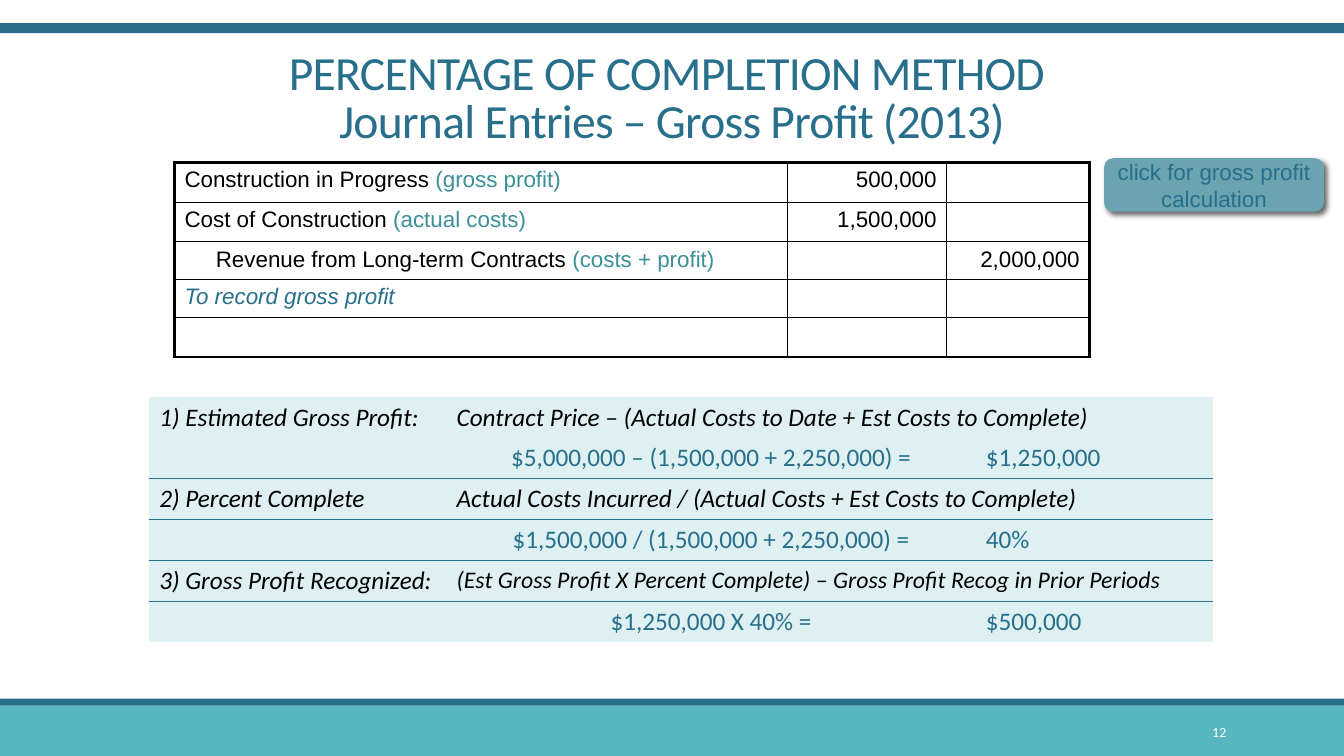
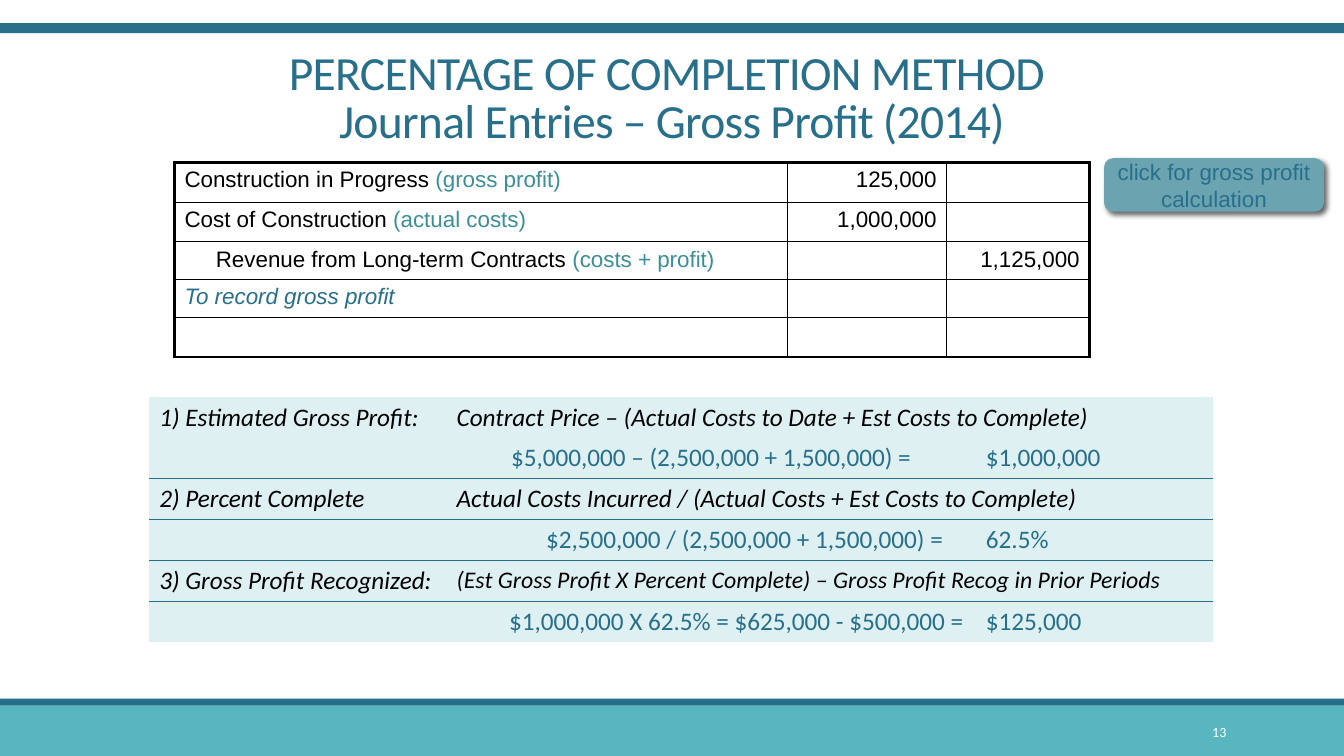
from dataclasses import dataclass

from lxml import etree
from pptx import Presentation
from pptx.dml.color import RGBColor
from pptx.enum.shapes import MSO_SHAPE as Preset
from pptx.enum.text import MSO_ANCHOR as Anchor, MSO_AUTO_SIZE as AutoSize, PP_ALIGN as Align
from pptx.oxml.ns import qn
from pptx.util import Inches, Pt


@dataclass(frozen=True)
class Theme:
    navy: str = "276F8B"
    teal: str = "58B6C0"
    note: str = "3A8F98"
    button: str = "6CA3B1"
    pale: str = "DEF0F2"
    black: str = "000000"
    white: str = "FFFFFF"
    heading_font: str = "Calibri"
    entry_font: str = "Arial"
    title_size: float = 34
    calc_size: float = 18
    long_size: float = 17
    entry_size: float = 16
    number_size: float = 10
    thin: float = 1
    thick: float = 2.25


@dataclass(frozen=True)
class YearEntry:
    number: int
    year: int
    profit: str
    costs: str
    revenue: str
    workings: tuple


THEME = Theme()
WIDTH, HEIGHT = Inches(13.33), Inches(7.5)
NO_TABLE_STYLE = "{2D5ABB26-0587-4C30-8999-92F81FD0307C}"

ENTRIES = (
    YearEntry(12, 2013, "500,000", "1,500,000", "2,000,000", (
        ("$5,000,000 – (1,500,000 + 2,250,000) =", "$1,250,000", 0),
        ("$1,500,000 / (1,500,000 + 2,250,000) =", "40%", 0),
        ("$1,250,000 X 40% =", "$500,000", 0))),
    YearEntry(13, 2014, "125,000", "1,000,000", "1,125,000", (
        ("$5,000,000 – (2,500,000 + 1,500,000) =", "$1,000,000", 0),
        ("$2,500,000 / (2,500,000 + 1,500,000) =", "62.5%", 5),
        ("$1,000,000 X 62.5% = $625,000 - $500,000 =", "$125,000", 3.75))),
)
STEPS = (
    ("1) Estimated Gross Profit:",
     "Contract Price – (Actual Costs to Date + Est Costs to Complete)", THEME.calc_size),
    ("2) Percent Complete",
     "Actual Costs Incurred / (Actual Costs + Est Costs to Complete)", THEME.calc_size),
    ("3) Gross Profit Recognized:",
     "(Est Gross Profit X Percent Complete) – Gross Profit Recog in Prior Periods",
     THEME.long_size),
)


def col(share):
    return round(WIDTH * share / 100)


def row(share):
    return round(HEIGHT * share / 100)


def place(left, top, width, height):
    return col(left), row(top), col(width), row(height)


def add_run(paragraph, text, font, size, colour, italic=False):
    run = paragraph.add_run()
    run.text = text
    run.font.name = font
    run.font.size = Pt(size)
    run.font.italic = italic
    run.font.color.rgb = RGBColor.from_string(colour)
    return run


def add_panel(slide, preset, box, colour):
    panel = slide.shapes.add_shape(preset, *place(*box))
    panel.shadow.inherit = False
    panel.fill.solid()
    panel.fill.fore_color.rgb = RGBColor.from_string(colour)
    panel.line.fill.background()
    return panel


def furnish_layout(layout, slide):
    heading = layout.placeholders[0]
    heading.left, heading.top, heading.width, heading.height = place(0, 6.13, 100, 16.67)
    bands = ((0, 93.33, 100, 6.67, THEME.teal),
             (0, 92.4, 100, 0.93, THEME.navy),
             (0, 3.07, 100, 1.33, THEME.navy))
    for order, (*box, colour) in enumerate(bands):
        band = add_panel(slide, Preset.RECTANGLE, box, colour)._element
        band.nvSpPr.cNvPr.set("id", str(100 + order))
        layout.shapes._spTree.insert(2 + order, band)


def add_title(slide, year):
    frame = slide.shapes.title.text_frame
    frame.auto_size = AutoSize.NONE
    frame.vertical_anchor = Anchor.TOP
    heading = frame.paragraphs[0]
    heading.alignment = Align.CENTER
    heading.line_spacing = 0.85
    lines = ("PERCENTAGE OF COMPLETION METHOD ",
             f"Journal Entries – Gross Profit ({year})")
    for order, line in enumerate(lines):
        if order:
            heading.add_line_break()
        run = add_run(heading, line, THEME.heading_font, THEME.title_size, THEME.navy)
        run.font._element.set("spc", "-50")


def add_slide_number(slide, number):
    frame = slide.shapes.add_textbox(*place(81.25, 94.13, 10.73, 5.33)).text_frame
    frame.word_wrap = True
    frame.vertical_anchor = Anchor.MIDDLE
    paragraph = frame.paragraphs[0]
    paragraph.alignment = Align.RIGHT
    add_run(paragraph, str(number), THEME.heading_font, THEME.number_size, THEME.white)


def add_button(slide):
    button = add_panel(slide, Preset.ROUNDED_RECTANGLE, (82.15, 20.93, 16.35, 7.07), THEME.button)
    effects = button._element.spPr.find(qn("a:effectLst"))
    shadow = etree.SubElement(effects, qn("a:outerShdw"), blurRad=str(Pt(4)),
                              dist=str(Pt(3)), dir=str(45 * 60000), rotWithShape="0")
    shade = etree.SubElement(shadow, qn("a:srgbClr"), val=THEME.black)
    etree.SubElement(shade, qn("a:alpha"), val="60000")
    frame = button.text_frame
    frame.word_wrap = True
    frame.margin_left = frame.margin_right = col(0.4)
    frame.margin_top = frame.margin_bottom = 0
    frame.vertical_anchor = Anchor.MIDDLE
    label = frame.paragraphs[0]
    label.alignment = Align.CENTER
    add_run(label, "click for gross profit calculation",
            THEME.entry_font, THEME.entry_size, THEME.navy)


def add_plain_table(slide, left, top, widths, heights):
    box = place(left, top, sum(widths), sum(heights))
    table = slide.shapes.add_table(len(heights), len(widths), *box).table
    table.first_row = table.horz_banding = False
    table._tbl.tblPr.find(qn("a:tableStyleId")).text = NO_TABLE_STYLE
    for column, width in zip(table.columns, widths):
        column.width = col(width)
    for line, height in zip(table.rows, heights):
        line.height = row(height)
    return table


def set_borders(cell, colour, **weights):
    properties = cell._tc.get_or_add_tcPr()
    for side in "LRTB":
        if side in weights:
            border = etree.SubElement(properties, qn(f"a:ln{side}"), w=str(Pt(weights[side])))
            paint = etree.SubElement(border, qn("a:solidFill"))
            etree.SubElement(paint, qn("a:srgbClr"), val=colour)


def write_cell(cell, runs, font, size, align=Align.LEFT, indent=0):
    paragraph = cell.text_frame.paragraphs[0]
    paragraph.alignment = align
    if indent:
        paragraph._p.get_or_add_pPr().set("marL", str(col(indent)))
    for text, colour, italic in runs:
        add_run(paragraph, text, font, size, colour, italic)
    if not runs:
        etree.SubElement(paragraph._p, qn("a:endParaRPr"), sz=str(size * 100))


def add_journal(slide, entry):
    black, note = THEME.black, THEME.note
    lines = (
        ((("Construction in Progress ", black, False), ("(gross profit)", note, False)),
         entry.profit, "", 0),
        ((("Cost of Construction ", black, False), ("(actual costs)", note, False)),
         entry.costs, "", 0),
        ((("Revenue from Long-term Contracts ", black, False), ("(costs + profit)", note, False)),
         "", entry.revenue, 2.33),
        ((("To record gross profit", THEME.navy, True),), "", "", 0),
        ((), "", "", 0),
    )
    table = add_plain_table(slide, 12.98, 21.47, (45.61, 11.85, 10.65),
                            (5.33, 5.2, 4.93, 5.07, 5.2))
    for r, (account, debit, credit, indent) in enumerate(lines):
        amounts = [((text, black, False),) if text else () for text in (debit, credit)]
        for c, runs in enumerate((account, *amounts)):
            cell = table.cell(r, c)
            set_borders(cell, black,
                        L=THEME.thin if c else THEME.thick,
                        R=THEME.thick if c == 2 else THEME.thin,
                        T=THEME.thin if r else THEME.thick,
                        B=THEME.thin)
            cell.fill.background()
            write_cell(cell, runs, THEME.entry_font, THEME.entry_size,
                       Align.RIGHT if c else Align.LEFT, 0 if c else indent)


def add_calculation(slide, workings):
    table = add_plain_table(slide, 11.1, 52.53, (22.13, 39.38, 17.63), (5.4,) * 6)
    last = len(table.rows) - 1
    for r in range(last + 1):
        for c in range(3):
            cell = table.cell(r, c)
            if r % 2 == 0 and r > 0:
                set_borders(cell, THEME.navy, T=THEME.thin)
            elif r % 2 and r < last:
                set_borders(cell, THEME.navy, B=THEME.thin)
            cell.fill.solid()
            cell.fill.fore_color.rgb = RGBColor.from_string(THEME.pale)
    font, size = THEME.heading_font, THEME.calc_size
    for step, ((name, formula, formula_size), (sums, result, indent)) in enumerate(
            zip(STEPS, workings)):
        rule, working = 2 * step, 2 * step + 1
        table.cell(rule, 1).merge(table.cell(rule, 2))
        write_cell(table.cell(rule, 0), ((name, THEME.black, True),), font, size)
        write_cell(table.cell(rule, 1), ((formula, THEME.black, True),), font, formula_size)
        write_cell(table.cell(working, 0), (), font, size)
        write_cell(table.cell(working, 1), ((sums, THEME.navy, False),), font, size,
                   Align.CENTER, indent)
        write_cell(table.cell(working, 2), ((result, THEME.navy, False),), font, size)


def main():
    deck = Presentation()
    deck.slide_width, deck.slide_height = WIDTH, HEIGHT
    layout = deck.slide_layouts[5]
    slides = [deck.slides.add_slide(layout) for _ in ENTRIES]
    furnish_layout(layout, slides[0])
    for slide, entry in zip(slides, ENTRIES):
        add_journal(slide, entry)
        add_title(slide, entry.year)
        add_slide_number(slide, entry.number)
        add_button(slide)
        add_calculation(slide, entry.workings)
    deck.save("out.pptx")


if __name__ == "__main__":
    main()
